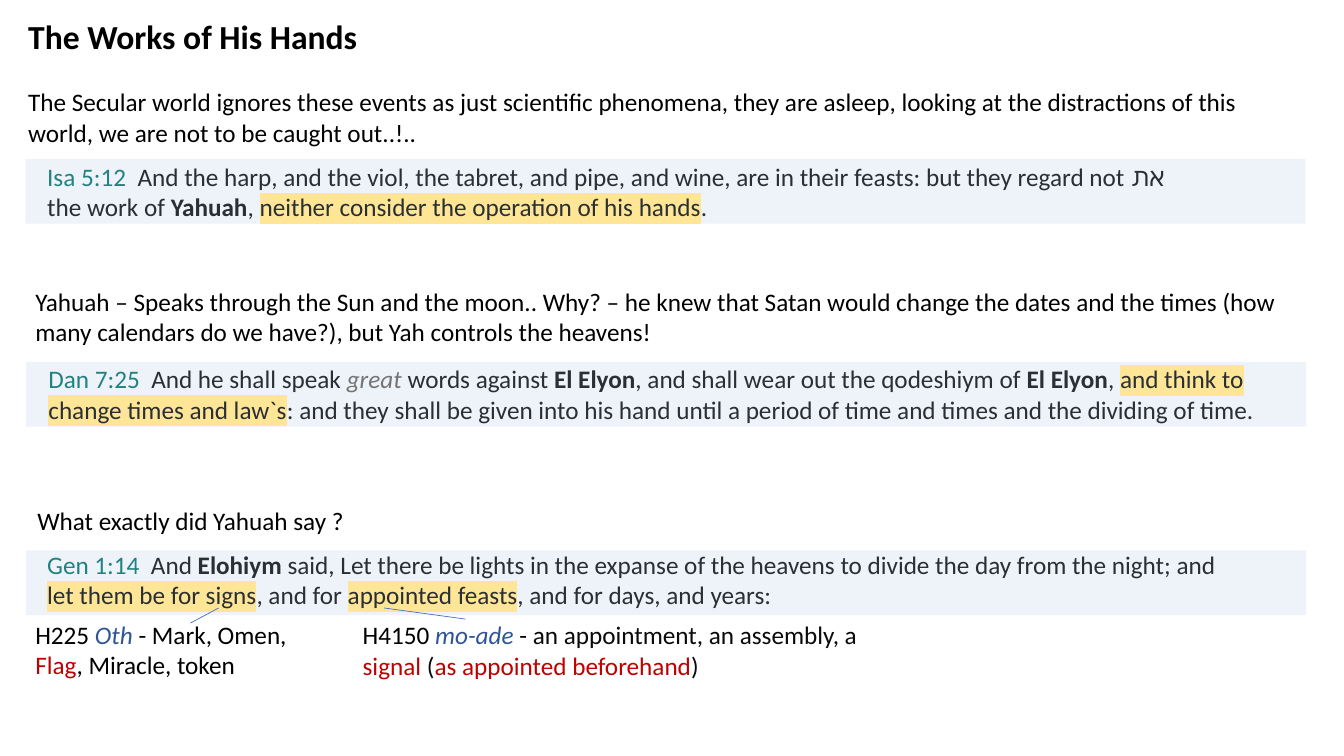
from dataclasses import dataclass

from lxml import etree
from pptx import Presentation
from pptx.dml.color import RGBColor
from pptx.enum.shapes import MSO_CONNECTOR, MSO_SHAPE
from pptx.enum.text import MSO_AUTO_SIZE
from pptx.oxml.ns import qn
from pptx.util import Cm, Pt

RECT = MSO_SHAPE.RECTANGLE
LINE = MSO_CONNECTOR.STRAIGHT
GROW = MSO_AUTO_SIZE.SHAPE_TO_FIT_TEXT


@dataclass(frozen=True)
class Theme:
    font: str = "Calibri"
    title: int = 24
    body: int = 18
    rule: float = 0.5
    band: str = "EEF2F9"
    line: str = "4472C4"
    mark: str = "FFE697"


THEME = Theme()

# style name: (colour, bold, italic, highlighted)
STYLES = {
    "plain": ("000000", False, False, False),
    "title": ("000000", True, False, False),
    "ref": ("218282", False, False, False),
    "verse": ("292F33", False, False, False),
    "name": ("292F33", True, False, False),
    "mark": ("292F33", False, False, True),
    "added": ("757575", False, True, False),
    "hebrew": ("2F5597", False, True, False),
    "gloss": ("0A0A0A", False, False, False),
    "key": ("C00000", False, False, False),
}

TITLE = [("The Works of His Hands", "title")]
SECULAR = [("The Secular world ignores these events as just scientific phenomena, "
            "they are asleep, looking at the distractions of this world, "
            "we are not to be caught out..!..", "plain")]
ISAIAH = [
    ("Isa 5:12", "ref"),
    ("  And the harp, and the viol, the tabret, and pipe, and wine, are in "
     "their feasts: but they regard not את the work of ", "verse"),
    ("Yahuah", "name"),
    (", ", "verse"),
    ("neither consider the operation of his hands", "mark"),
    (".", "verse"),
]
HEAVENS = [("Yahuah – Speaks through the Sun and the moon.. Why? – he knew that "
            "Satan would change the dates and the times (how many calendars do "
            "we have?), but Yah controls the heavens!", "plain")]
DANIEL = [
    ("Dan 7:25", "ref"),
    ("  And he shall speak ", "verse"),
    ("great", "added"),
    (" words against ", "verse"),
    ("El Elyon", "name"),
    (", and shall wear out the qodeshiym of ", "verse"),
    ("El Elyon", "name"),
    (", ", "verse"),
    ("and think to change times and law`s", "mark"),
    (": and they shall be given into his hand until a period of time and "
     "times and the dividing of time.", "verse"),
]
ASK = [("What exactly did Yahuah say ?", "plain")]
GENESIS = [
    ("Gen 1:14", "ref"),
    ("  And ", "verse"),
    ("Elohiym", "name"),
    (" said, Let there be lights in the expanse of the heavens to divide "
     "the day from the night; and ", "verse"),
    ("let them be for signs", "mark"),
    (", and for ", "verse"),
    ("appointed feasts", "mark"),
    (", and for days, and years:", "verse"),
]
SIGNS = [
    ("H225 ", "plain"),
    ("Oth", "hebrew"),
    (" - Mark, Omen, ", "plain"),
    ("Flag", "key"),
    (", Miracle, token", "plain"),
]
FEASTS = [
    ("H4150 ", "plain"),
    ("mo-ade", "hebrew"),
    (" - ", "plain"),
    ("an appointment, an assembly, a ", "gloss"),
    ("signal", "key"),
    (" (", "gloss"),
    ("as appointed beforehand", "key"),
    (")", "gloss"),
]

# Lengths in cm
WIDE, TALL = 33.87, 19.05
BAND_W, BAND_H = 32.26, 1.63
ONE, TWO = 1.02, 1.8  # box height for one and two lines
BANDS = [(0.64, 4.01), (0.66, 9.12), (0.66, 13.87)]  # left, top
BOXES = [  # runs, left, top, width, height
    (TITLE, 0.46, 0.28, 32.8, 1.27),
    (SECULAR, 0.46, 2.06, 32.26, TWO),
    (ISAIAH, 0.94, 3.94, 29.13, TWO),
    (HEAVENS, 0.64, 7.09, 32.46, TWO),
    (DANIEL, 0.97, 9.04, 31.98, TWO),
    (ASK, 0.69, 12.62, 32.46, ONE),
    (GENESIS, 0.94, 13.72, 30.73, TWO),
    (SIGNS, 0.64, 15.47, 7.24, TWO),
    (FEASTS, 8.89, 15.49, 14.22, TWO),
]
LINKS = [(4.8, 15.7, 5.51, 15.32), (11.73, 15.6, 9.68, 15.32)]


def rgb(code):
    return RGBColor.from_string(code)


def add_band(slide, left, top):
    band = slide.shapes.add_shape(RECT, *map(Cm, (left, top, BAND_W, BAND_H)))
    band.shadow.inherit = False
    band.fill.solid()
    band.fill.fore_color.rgb = rgb(THEME.band)
    band.line.fill.background()


def add_run(para, text, style):
    colour, bold, slant, marked = STYLES[style]
    run = para.add_run()
    run.text = text
    run.font.color.rgb = rgb(colour)
    if bold:
        run.font.bold = True
    if slant:
        run.font.italic = True
    if marked:
        glow = etree.SubElement(run.font._element, qn("a:highlight"))
        etree.SubElement(glow, qn("a:srgbClr"), val=THEME.mark)


def add_text(slide, runs, *place):
    frame = slide.shapes.add_textbox(*map(Cm, place)).text_frame
    frame.word_wrap = True
    frame.auto_size = GROW
    para = frame.paragraphs[0]
    para.font.name = THEME.font
    para.font.size = Pt(THEME.title if runs is TITLE else THEME.body)
    for text, style in runs:
        add_run(para, text, style)


def add_link(slide, *ends):
    link = slide.shapes.add_connector(LINE, *map(Cm, ends))
    link.line.color.rgb = rgb(THEME.line)
    link.line.width = Pt(THEME.rule)
    etree.SubElement(link._element.spPr, qn("a:effectLst"))


def main():
    deck = Presentation()
    deck.slide_width, deck.slide_height = Cm(WIDE), Cm(TALL)
    slide = deck.slides.add_slide(deck.slide_layouts[6])
    for band in BANDS:
        add_band(slide, *band)
    for box in BOXES:
        add_text(slide, *box)
    for link in LINKS:
        add_link(slide, *link)
    deck.save("out.pptx")


if __name__ == "__main__":
    main()
